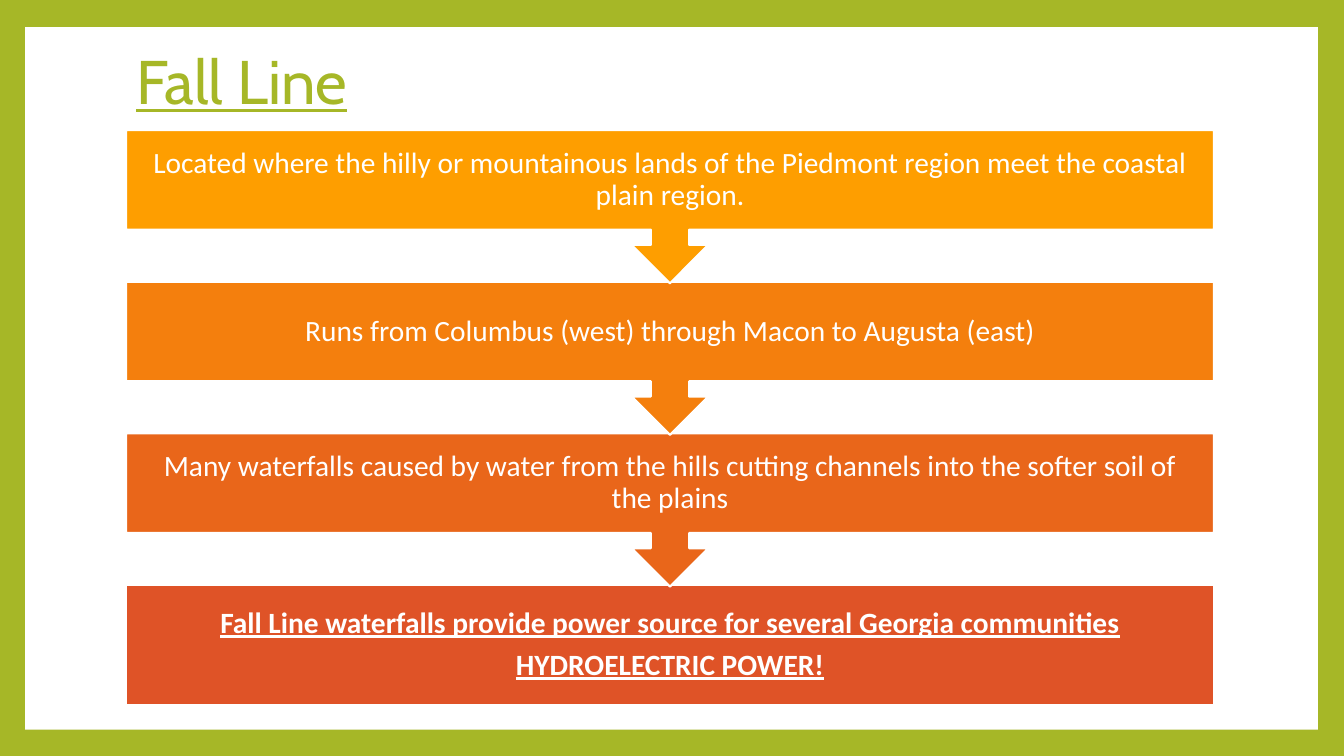
from pptx import Presentation
from pptx.dml.color import RGBColor
from pptx.enum.shapes import MSO_SHAPE as Preset
from pptx.enum.text import MSO_ANCHOR as Anchor, PP_ALIGN as Align
from pptx.util import Inches, Pt

GREEN = RGBColor(0xA6, 0xB7, 0x27)
WHITE = RGBColor(0xFF, 0xFF, 0xFF)
AMBER = RGBColor(0xFE, 0x9E, 0x00)
ORANGE = RGBColor(0xF4, 0x7F, 0x0D)
DARK_ORANGE = RGBColor(0xE9, 0x66, 0x1A)
RED = RGBColor(0xDF, 0x53, 0x27)

LEFT, WIDTH = 1.25, 10.79
FIRST_TOP, STEP_PITCH = 1.29, 1.505
CALLOUT_HEIGHT, FINAL_HEIGHT = 1.52, 1.19
STEPS = [
    (AMBER, ["Located where the hilly or mountainous lands of the Piedmont region "
             "meet the coastal plain region."]),
    (ORANGE, ["Runs from Columbus (west) through Macon to Augusta (east)"]),
    (DARK_ORANGE, ["Many waterfalls caused by water from the hills cutting channels "
                   "into the softer soil of the plains"]),
    (RED, ["Fall Line waterfalls provide power source for several Georgia communities",
           "HYDROELECTRIC POWER!"]),
]


class FlowSlide:
    """Draws a framed slide with a title and a vertical chain of steps."""

    title_font, body_font = "Cabin", "Calibri"

    def __init__(self, presentation):
        self.slide = presentation.slides.add_slide(presentation.slide_layouts[5])

    def frame(self):
        background = self.slide.background.fill
        background.solid()
        background.fore_color.rgb = GREEN
        panel = self.shape(Preset.RECTANGLE, 0.25, 0.27, 12.82, 6.97, WHITE)
        panel.line.fill.background()

    def shape(self, preset, left, top, width, height, color):
        shape = self.slide.shapes.add_shape(
            preset, Inches(left), Inches(top), Inches(width), Inches(height))
        shape.shadow.inherit = False
        shape.fill.solid()
        shape.fill.fore_color.rgb = color
        return shape

    def title(self, text):
        title = self.slide.shapes.title
        title.left, title.top = Inches(LEFT), Inches(0.38)
        title.width, title.height = Inches(10.8), Inches(0.92)
        self.slide.shapes._spTree.append(title._element)
        title.text_frame.text = text
        title.text_frame.vertical_anchor = Anchor.MIDDLE
        paragraph = title.text_frame.paragraphs[0]
        paragraph.alignment = Align.LEFT
        paragraph.line_spacing = 0.9
        self.style(paragraph.font, self.title_font, 44, GREEN, underline=True)

    def step(self, top, color, lines, final):
        preset = Preset.RECTANGLE if final else Preset.DOWN_ARROW_CALLOUT
        height = FINAL_HEIGHT if final else CALLOUT_HEIGHT
        shape = self.shape(preset, LEFT, top, WIDTH, height, color)
        shape.line.color.rgb = WHITE
        shape.line.width = Pt(1.5)
        frame = shape.text_frame
        frame.word_wrap = True
        frame.vertical_anchor = Anchor.MIDDLE
        frame.margin_left = frame.margin_right = Inches(0.16)
        frame.margin_top = frame.margin_bottom = Inches(0.16)
        frame.text = "\n".join(lines)
        for paragraph in frame.paragraphs:
            paragraph.alignment = Align.CENTER
            paragraph.line_spacing = 0.9
            paragraph.space_after = Pt(7.35)
            self.style(paragraph.font, self.body_font, 21, WHITE, final, final)

    def style(self, font, name, size, color, bold=False, underline=False):
        font.name, font.size = name, Pt(size)
        font.color.rgb = color
        font.bold, font.underline = bold, underline


def main():
    presentation = Presentation()
    presentation.slide_width = Inches(13.33)
    presentation.slide_height = Inches(7.5)
    fall_line = FlowSlide(presentation)
    fall_line.frame()
    fall_line.title("Fall Line")
    last = len(STEPS) - 1
    for index, (color, lines) in reversed(list(enumerate(STEPS))):
        fall_line.step(FIRST_TOP + index * STEP_PITCH, color, lines, index == last)
    presentation.save("out.pptx")


if __name__ == "__main__":
    main()
